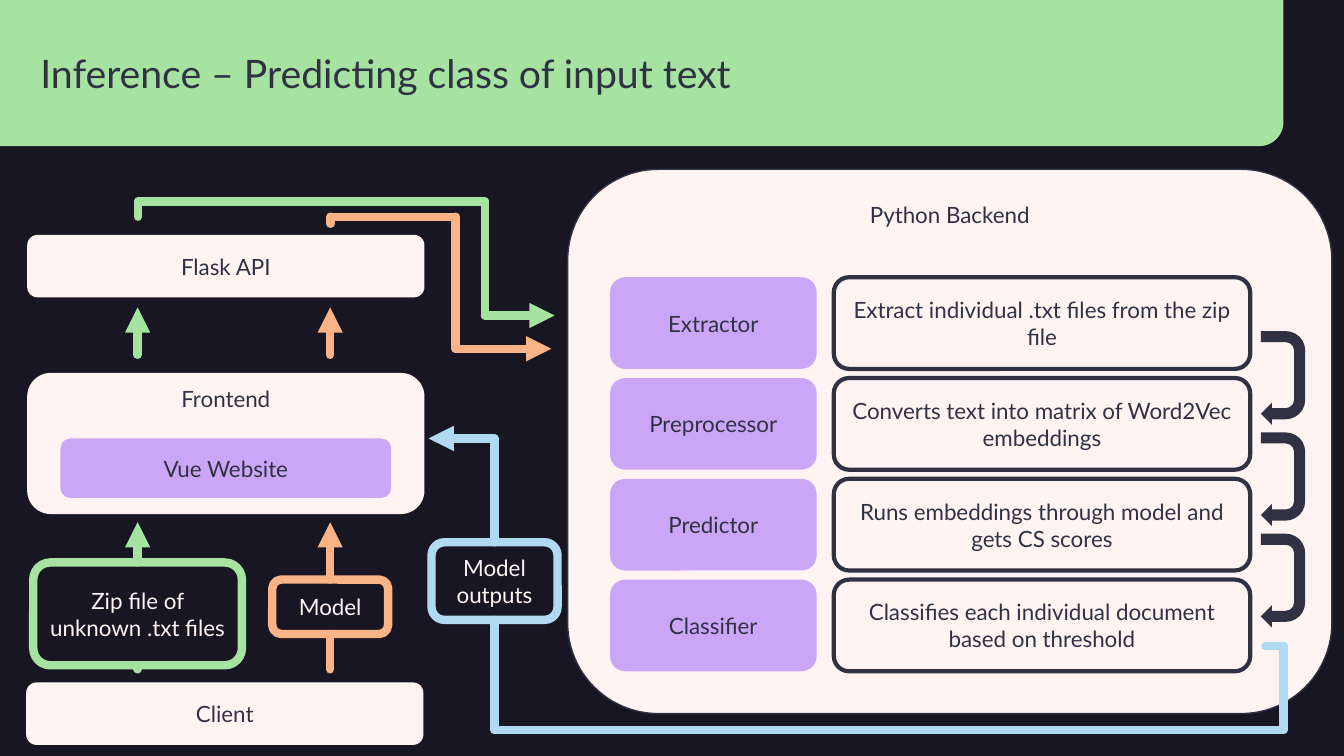
from math import cos, pi, sin

from lxml import etree
from pptx import Presentation
from pptx.dml.color import RGBColor
from pptx.enum.shapes import MSO_CONNECTOR, MSO_SHAPE
from pptx.enum.text import MSO_ANCHOR, PP_ALIGN
from pptx.oxml.ns import qn
from pptx.util import Emu, Inches, Pt

ROUNDED = MSO_SHAPE.ROUNDED_RECTANGLE
UTURN = MSO_SHAPE.U_TURN_ARROW
STRAIGHT = MSO_CONNECTOR.STRAIGHT
LEFT, CENTER = PP_ALIGN.LEFT, PP_ALIGN.CENTER
TOP, MIDDLE = MSO_ANCHOR.TOP, MSO_ANCHOR.MIDDLE

NIGHT = RGBColor(0x19, 0x16, 0x23)
INK = RGBColor(0x30, 0x32, 0x44)
CREAM = RGBColor(0xFF, 0xF4, 0xF2)
GREEN = RGBColor(0xA6, 0xE3, 0xA1)
PURPLE = RGBColor(0xCB, 0xA6, 0xF7)
PEACH = RGBColor(0xFA, 0xB3, 0x87)
BLUE = RGBColor(0xB0, 0xDA, 0xF1)

COLS, ROWS = 133.3, 75
CELL = Inches(7.5) / ROWS
SIDE_TOP, SIDE_BOTTOM = 0, 2

STAGES = [
    ("Extractor", "Extract individual .txt files from the zip file"),
    ("Preprocessor", "Converts text into matrix of Word2Vec embeddings"),
    ("Predictor", "Runs embeddings through model and gets CS scores"),
    ("Classifier", "Classifies each individual document based on threshold"),
]


def grid(*cells):
    return [Emu(round(n * CELL)) for n in cells]


def write(sp, text, size=16, color=INK, align=CENTER, anchor=MIDDLE):
    tf = sp.text_frame
    tf.word_wrap = True
    tf.vertical_anchor = anchor
    p = tf.paragraphs[0]
    p.alignment = align
    r = p.add_run()
    r.text = text
    r.font.name = "Lato"
    r.font.size = Pt(size)
    r.font.color.rgb = color


class Diagram:
    def __init__(self, prs):
        self.s = prs.slides.add_slide(prs.slide_layouts[5])
        self.s.background.fill.solid()
        self.s.background.fill.fore_color.rgb = NIGHT

    def paint(self, sp, fill=None, line=None, width=1):
        sp.shadow.inherit = False
        if fill is None:
            sp.fill.background()
        else:
            sp.fill.solid()
            sp.fill.fore_color.rgb = fill
        if line is None:
            sp.line.fill.background()
        else:
            sp.line.color.rgb = line
            sp.line.width = Pt(width)

    def banner(self, text, width, height, radius):
        corner = [(width - radius + radius * cos(a), height - radius + radius * sin(a))
                  for a in (pi / 2 * i / 12 for i in range(13))]
        outline = [(width, 0), *corner, (0, height)]
        fb = self.s.shapes.build_freeform(0, 0)
        fb.add_line_segments([grid(*pt) for pt in outline], close=True)
        sp = fb.convert_to_shape()
        self.paint(sp, GREEN)
        title = self.s.shapes.title
        title.left, title.top, title.width, title.height = grid(4, 0, width - 8, height)
        title.text_frame.margin_left = 0
        write(title, text, size=28, align=LEFT)
        sp._element.addnext(title._element)

    def box(self, text, x, y, w, h, fill=None, line=None, width=1, **fmt):
        sp = self.s.shapes.add_shape(ROUNDED, *grid(x, y, w, h))
        self.paint(sp, fill, line, width)
        write(sp, text, **fmt)
        return sp

    def uturn(self, x, y, w, h):
        sp = self.s.shapes.add_shape(UTURN, *grid(x, y, w, h))
        sp.rotation = 90
        for i, value in enumerate((0.25, 0.25, 0.25, 0.438, 1)):
            sp.adjustments[i] = value
        self.paint(sp, INK)

    def route(self, color, *points, arrow=False, start=None, stop=None):
        lines = []
        for a, b in zip(points, points[1:]):
            c = self.s.shapes.add_connector(STRAIGHT, *grid(*a, *b))
            c.line.color.rgb = color
            c.line.width = Pt(6)
            ln = c.line._get_or_add_ln()
            ln.set("cap", "rnd")
            etree.SubElement(ln, qn("a:round"))
            etree.SubElement(c._element.spPr, qn("a:effectLst"))
            lines.append(c)
        if arrow:
            ln = lines[-1].line._get_or_add_ln()
            etree.SubElement(ln, qn("a:tailEnd"), type="triangle")
        if start:
            lines[0].begin_connect(*start)
        if stop:
            lines[-1].end_connect(*stop)


def main():
    prs = Presentation()
    prs.slide_width, prs.slide_height = grid(COLS, ROWS)
    d = Diagram(prs)
    d.banner("Inference – Predicting class of input text", 127.3, 14.5, 2.4)

    d.box("Frontend", 2.7, 37, 39.4, 14, CREAM, anchor=TOP)
    d.box("Vue Website", 6, 43.5, 32.8, 5.9, PURPLE)
    d.box("Flask API", 2.7, 23.3, 39.4, 6.2, CREAM)
    d.box("Client", 2.6, 67.7, 39.4, 6.2, CREAM)
    d.box("Python Backend", 56.3, 16.8, 75.8, 54, CREAM, INK, anchor=TOP)

    for i, (stage, task) in enumerate(STAGES):
        y = 27.5 + 10 * i
        d.box(stage, 60.5, y, 20.5, 9.1, PURPLE)
        d.box(task, 82.7, y, 41.3, 9.1, line=INK, width=3)
    for i in range(len(STAGES) - 1):
        d.uturn(122.6, 35.3 + 10.05 * i, 9.3, 4.4)

    archive = d.box("Zip file of unknown .txt files", 3.3, 55.8, 20.7, 10.2,
                    line=GREEN, width=6, color=CREAM)
    model = d.box("Model", 27, 57.5, 11.5, 5.4, line=PEACH, width=6, color=CREAM)
    outputs = d.box("Model outputs", 42.8, 53.8, 12.5, 7.7,
                    line=BLUE, width=6, color=CREAM)

    for color, x, sp, top, bottom in ((GREEN, 13.65, archive, 55.8, 66),
                                      (PEACH, 32.75, model, 57.5, 62.9)):
        d.route(color, (x, 66.4), (x, bottom), stop=(sp, SIDE_BOTTOM))
        d.route(color, (x, top), (x, 51.8), arrow=True, start=(sp, SIDE_TOP))
        d.route(color, (x, 35.2), (x, 30.5), arrow=True)

    d.route(GREEN, (13.7, 21.5), (13.7, 20), (48.1, 20), (48.1, 31.3), (55, 31.3),
            arrow=True)
    d.route(PEACH, (32.8, 22.2), (32.8, 21.5), (45.2, 21.5), (45.2, 34.6),
            (54.7, 34.6), arrow=True)
    d.route(BLUE, (125.5, 64.1), (127.3, 64.1), (127.3, 72.4), (49.05, 72.4),
            (49.05, 61.5), stop=(outputs, SIDE_BOTTOM))
    d.route(BLUE, (49.05, 53.8), (49.05, 43.5), (42.5, 43.5), arrow=True,
            start=(outputs, SIDE_TOP))

    prs.save("out.pptx")


if __name__ == "__main__":
    main()
